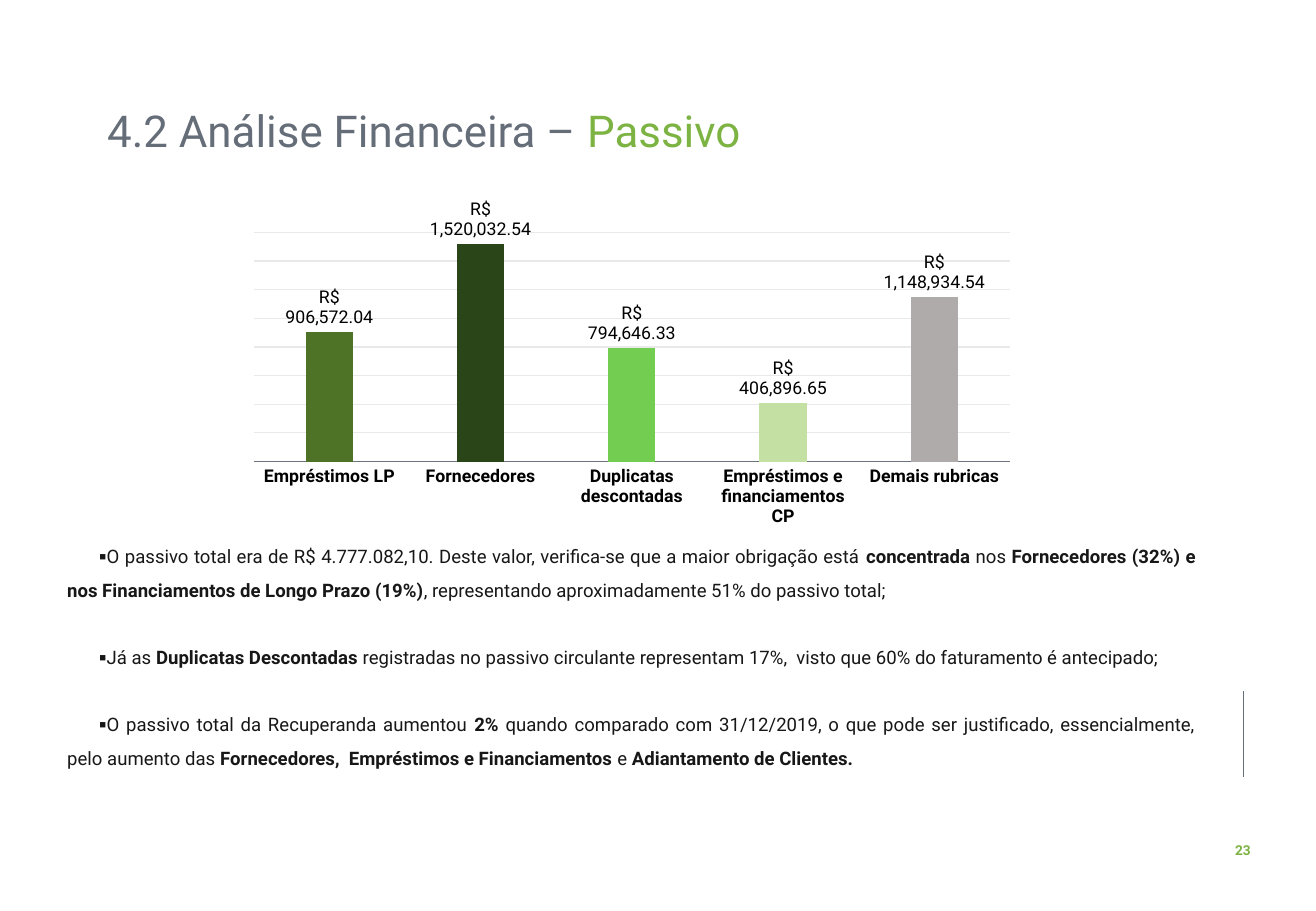
from lxml import etree
from pptx import Presentation
from pptx import util as u
from pptx.chart.data import CategoryChartData
from pptx.dml.color import RGBColor
from pptx.enum import chart as ch, shapes, text
from pptx.oxml import parse_xml
from pptx.oxml.ns import nsdecls, qn

FONT = "Roboto"
GRAY = RGBColor(0x65, 0x6D, 0x78)
GREEN = RGBColor(0x7C, 0xB3, 0x42)
INK = RGBColor(0x18, 0x17, 0x17)
BLACK = RGBColor(0, 0, 0)
GRID = RGBColor(0xE7, 0xE9, 0xEB)
AXIS = RGBColor(0x6C, 0x74, 0x80)
MONEY = '"R$"\\ #,##0.00'

# Content
TITLE = [("4.2 Análise Financeira – ", GRAY), ("Passivo", GREEN)]
BARS = [
    ("Empréstimos LP", 906572.04, RGBColor(0x4F, 0x73, 0x26)),
    ("Fornecedores", 1520032.54, RGBColor(0x2A, 0x46, 0x18)),
    ("Duplicatas descontadas", 794646.33, RGBColor(0x73, 0xCD, 0x50)),
    ("Empréstimos e financiamentos CP", 406896.65, RGBColor(0xC4, 0xE0, 0xA3)),
    ("Demais rubricas", 1148934.54, RGBColor(0xAF, 0xAB, 0xAB)),
]
# Each note alternates plain and bold parts, plain first
NOTES = [
    ("O passivo total era de R$ 4.777.082,10. Deste valor, verifica-se que a "
     "maior obrigação está ", "concentrada", " nos ",
     "Fornecedores (32%) e nos Financiamentos de Longo Prazo (19%)",
     ", representando aproximadamente 51% do passivo total;"),
    ("Já as ", "Duplicatas Descontadas ",
     "registradas no passivo circulante representam 17%,  visto que 60% do "
     "faturamento é antecipado;"),
    ("O passivo total da Recuperanda aumentou ", "2% ",
     "quando comparado com 31/12/2019, o que pode ser justificado, "
     "essencialmente, pelo aumento das ",
     "Fornecedores,  Empréstimos e Financiamentos ", "e ",
     "Adiantamento de Clientes."),
]
PAGE = "23"

# Boxes in px: left, top, width, height
SIZE = (1316, 911)
TITLE_BOX = (95, 104, 994, 65)
CHART_BOX = (238, 199, 787, 329)
PLOT_BOX = (254, 229, 756, 232)
NOTES_BOX = (55, 528, 1153, 248)
PAGE_BOX = (1222, 836, 42, 29)
RULE = (1243, 691, 1243, 777)
INDENT = 32


def px(n):
    return u.Emu(round(n * u.Inches(1) / 121.5))


def place(shape, box):
    shape.left, shape.top, shape.width, shape.height = map(px, box)


def style(font, size, color, bold=None):
    font.name, font.size, font.bold = FONT, u.Pt(size), bold
    font.color.rgb = color


def frame(shape):
    tf = shape.text_frame
    tf.word_wrap = True
    tf.auto_size = text.MSO_AUTO_SIZE.NONE
    tf.vertical_anchor = text.MSO_ANCHOR.TOP
    return tf


prs = Presentation()
prs.slide_width, prs.slide_height = map(px, SIZE)
slide = prs.slides.add_slide(prs.slide_layouts[1])
title, body = slide.placeholders

# Title
place(title, TITLE_BOX)
p = frame(title).paragraphs[0]
p.alignment = text.PP_ALIGN.LEFT
p.line_spacing = 0.9
for words, color in TITLE:
    r = p.add_run()
    r.text = words
    style(r.font, 26, color, False)

# Column chart
names, vals, fills = zip(*BARS)
data = CategoryChartData(number_format=MONEY)
data.categories = names
data.add_series("Series 1", vals)
chart = slide.shapes.add_chart(
    ch.XL_CHART_TYPE.COLUMN_CLUSTERED, *map(px, CHART_BOX), data).chart
chart.has_legend = chart.has_title = False
style(chart.font, 10.5, BLACK)

plot = chart.plots[0]
plot.gap_width, plot.overlap = 219, -27
plot.vary_by_categories = False
for i, fill in enumerate(fills):
    bar = plot.series[0].points[i].format.fill
    bar.solid()
    bar.fore_color.rgb = fill
plot.has_data_labels = True
tags = plot.data_labels
tags.show_value = True
tags.number_format, tags.number_format_is_linked = MONEY, False
tags.position = ch.XL_LABEL_POSITION.OUTSIDE_END
style(tags.font, 10.5, BLACK)

cat, val = chart.category_axis, chart.value_axis
cat.major_tick_mark = ch.XL_TICK_MARK.NONE
cat.format.line.color.rgb, cat.format.line.width = AXIS, u.Pt(0.75)
style(cat.tick_labels.font, 10.5, BLACK, True)
val.visible = False
val.minimum_scale, val.maximum_scale, val.major_unit = 0, 1600000, 200000
grid = val.major_gridlines.format.line
grid.color.rgb, grid.width = GRID, u.Pt(0.75)

# Fixed plot area inside the chart
cx, cy, cw, chh = CHART_BOX
x, y, w, h = PLOT_BOX
parts = {"x": (x - cx) / cw, "y": (y - cy) / chh, "w": w / cw, "h": h / chh}
area = chart._chartSpace.chart.plotArea
for old in area.findall(qn("c:layout")):
    area.remove(old)
area.insert(0, parse_xml(
    f'<c:layout {nsdecls("c")}><c:manualLayout><c:layoutTarget val="inner"/>'
    '<c:xMode val="edge"/><c:yMode val="edge"/>'
    + "".join(f'<c:{k} val="{v:.3f}"/>' for k, v in parts.items())
    + "</c:manualLayout></c:layout>"))

# Notes
place(body, NOTES_BOX)
tf = frame(body)
for i, note in enumerate(NOTES):
    p = tf.paragraphs[0] if i == 0 else tf.add_paragraph()
    pr = p._p.get_or_add_pPr()
    pr.set("marL", "0")
    pr.set("indent", str(px(INDENT)))
    etree.SubElement(pr, qn("a:buFont")).set("typeface", FONT)
    etree.SubElement(pr, qn("a:buChar")).set("char", "▪")
    p.alignment = text.PP_ALIGN.JUSTIFY
    p.line_spacing = 1.5
    p.space_before = u.Pt(20 if i else 0)
    style(p.font, 11, INK)
    for j, words in enumerate(note):
        r = p.add_run()
        r.text = words
        style(r.font, 11, INK, j % 2 == 1)

# Rule and page number
rule = slide.shapes.add_connector(shapes.MSO_CONNECTOR.STRAIGHT, *map(px, RULE))
rule.line.color.rgb, rule.line.width = GRAY, u.Pt(0.5)
etree.SubElement(rule._element.spPr, qn("a:effectLst"))

page = slide.shapes.add_textbox(*map(px, PAGE_BOX))
page.text_frame.word_wrap = False
p = page.text_frame.paragraphs[0]
p.text = PAGE
p.alignment = text.PP_ALIGN.CENTER
style(p.font, 8.1, GREEN, True)

prs.save("out.pptx")
